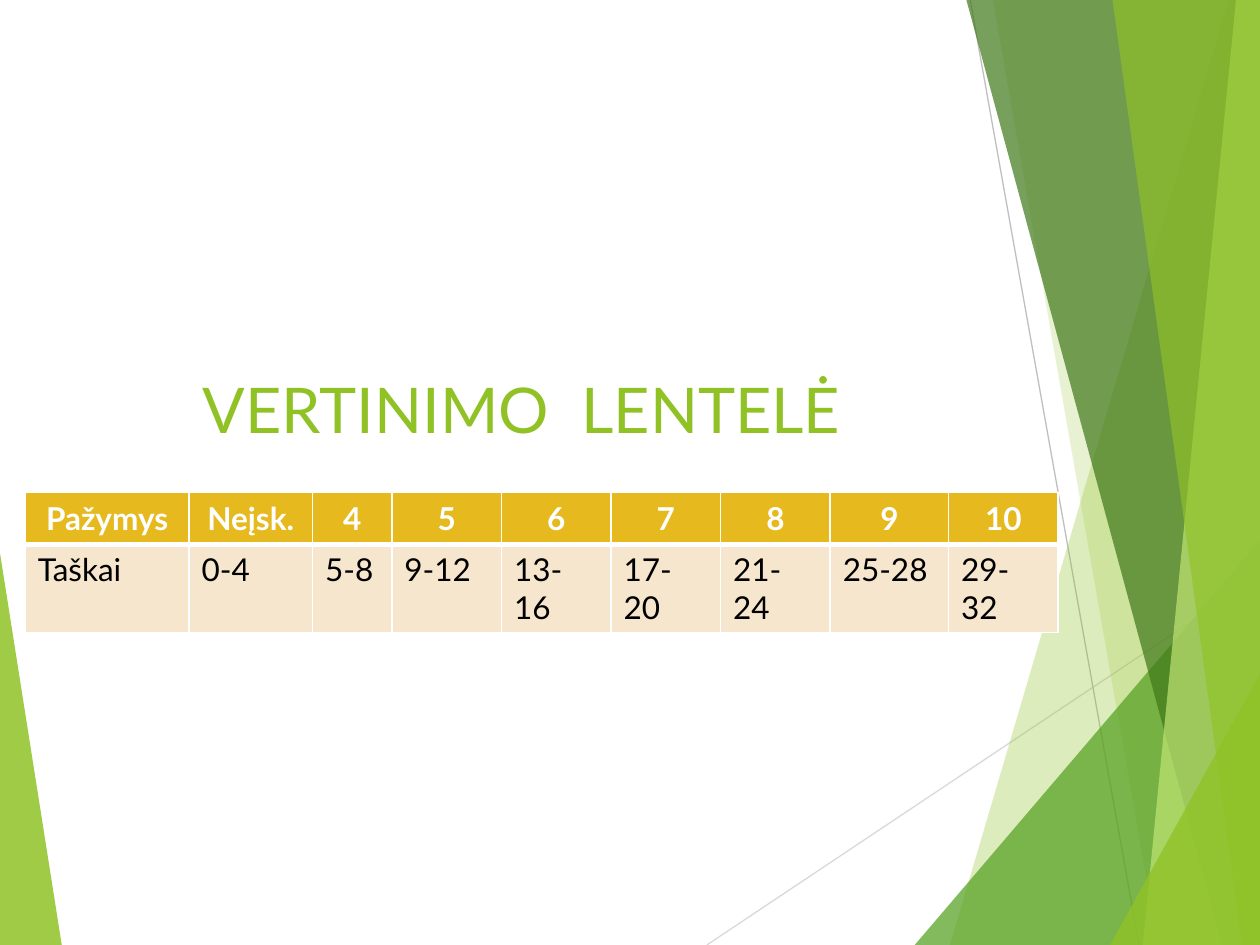
from lxml.etree import SubElement
from pptx import Presentation
from pptx.dml.color import RGBColor
from pptx.enum.shapes import MSO_CONNECTOR
from pptx.enum.text import MSO_ANCHOR, MSO_AUTO_SIZE, PP_ALIGN
from pptx.oxml.ns import qn
from pptx.util import Inches, Pt

FONT = "Lato"
COLORS = {
    "lime": "90C226", "green": "54A021", "forest": "3F7819", "pale": "C0E474",
    "light_gray": "D9D9D9", "gray": "BFBFBF", "gold": "E6B91E",
    "cream": "F5E6CD", "white": "FFFFFF", "black": "000000",
}
WIDTH, HEIGHT = 10, 7.5

TITLE = "VERTINIMO  LENTELĖ"
GRADES = [
    ("Pažymys", "Taškai", 1.3), ("Neįsk.", "0-4", 0.98), ("4", "5-8", 0.63),
    ("5", "9-12", 0.87), ("6", "13-16", 0.87), ("7", "17-20", 0.87),
    ("8", "21-24", 0.87), ("9", "25-28", 0.94), ("10", "29-32", 0.87),
]  # grade, points, column width
ROW_STYLES = [
    dict(fill="gold", text="white", bold=True, align=PP_ALIGN.CENTER, bottom=3),
    dict(fill="cream", text="black", bold=False, align=PP_ALIGN.LEFT, bottom=1),
]

RAYS = [
    ((5.61, HEIGHT), (WIDTH, 4.57), "light_gray"),
    ((7.7, 0), (9.04, HEIGHT), "gray"),
]
LEFT_SHARD = ([(0, 4.39), (0.49, HEIGHT), (0, HEIGHT)], "lime", 85)


def right_shard(top, bottom, color, opacity):
    """Band from the slide's top to its bottom, filled out to the right edge."""
    points = [(top, 0), (bottom, HEIGHT), (WIDTH, HEIGHT), (WIDTH, 0)]
    return points, color, opacity


def corner_shard(left, top, color, opacity):
    """Triangle in the lower right corner."""
    points = [(left, HEIGHT), (WIDTH, top), (WIDTH, HEIGHT)]
    return points, color, opacity


RIGHT_SHARDS = [
    right_shard(9.75, 7.54, "lime", 30),
    right_shard(7.88, 9.19, "lime", 20),
    corner_shard(7.26, 4.29, "green", 72),
    right_shard(7.67, 9.7, "forest", 70),
    right_shard(9.81, 9.07, "pale", 70),
    right_shard(8.83, 9.86, "lime", 65),
    corner_shard(8.81, 5.35, "lime", 80),
]


def rgb(color):
    return RGBColor.from_string(COLORS[color])


def draw_shard(shapes, points, color, opacity):
    corners = [(Inches(x), Inches(y)) for x, y in points]
    builder = shapes.build_freeform(*corners[0])
    builder.add_line_segments(corners[1:], close=True)
    shard = builder.convert_to_shape()
    shard.shadow.inherit = False
    shard.line.fill.background()
    shard.fill.solid()
    shard.fill.fore_color.rgb = rgb(color)
    tint = shard._element.spPr.find(".//" + qn("a:srgbClr"))
    SubElement(tint, qn("a:alpha"), val=str(opacity * 1000))


def draw_ray(shapes, start, end, color):
    ends = [Inches(length) for length in (*start, *end)]
    ray = shapes.add_connector(MSO_CONNECTOR.STRAIGHT, *ends)
    ray.line.color.rgb = rgb(color)
    ray.line.width = Pt(0.75)
    SubElement(ray._element.spPr, qn("a:effectLst"))


def write(frame, text, size, color, bold, align):
    paragraph = frame.paragraphs[0]
    paragraph.alignment = align
    run = paragraph.add_run()
    run.text = text
    for name, value in dict(name=FONT, size=Pt(size), bold=bold).items():
        setattr(run.font, name, value)
    run.font.color.rgb = rgb(color)


def style_cell(cell, text, style, top):
    write(cell.text_frame, text, 18, style["text"], style["bold"], style["align"])
    properties = cell._tc.get_or_add_tcPr()
    borders = {"lnL": 1, "lnR": 1, "lnT": top, "lnB": style["bottom"]}
    for side, points in borders.items():
        border = SubElement(properties, qn(f"a:{side}"), w=str(Pt(points)))
        fill = SubElement(border, qn("a:solidFill"))
        SubElement(fill, qn("a:srgbClr"), val=COLORS["white"])
    cell.fill.solid()
    cell.fill.fore_color.rgb = rgb(style["fill"])


def add_title(slide):
    title = slide.shapes.title
    box = dict(left=1.51, top=2.89, width=6.98, height=1.41)
    for name, length in box.items():
        setattr(title, name, Inches(length))
    frame = title.text_frame
    layout = dict(word_wrap=True, auto_size=MSO_AUTO_SIZE.NONE,
                  vertical_anchor=MSO_ANCHOR.TOP)
    for name, value in layout.items():
        setattr(frame, name, value)
    write(frame, TITLE, 36, "lime", False, PP_ALIGN.LEFT)
    slide.shapes._spTree.append(title._element)


def add_grades(shapes):
    *rows, widths = zip(*GRADES)
    row_height = 0.41
    box = [Inches(v) for v in (0.2, 3.91, sum(widths), row_height * len(rows))]
    table = shapes.add_table(len(rows), len(widths), *box).table
    for column, width in zip(table.columns, widths):
        column.width = Inches(width)
    top = 1
    for r, (texts, style) in enumerate(zip(rows, ROW_STYLES)):
        table.rows[r].height = Inches(row_height)
        for c, text in enumerate(texts):
            style_cell(table.cell(r, c), text, style, top)
        top = style["bottom"]


def main():
    deck = Presentation()
    deck.slide_width, deck.slide_height = Inches(WIDTH), Inches(HEIGHT)
    slide = deck.slides.add_slide(deck.slide_layouts[5])
    draw_shard(slide.shapes, *LEFT_SHARD)
    for ray in RAYS:
        draw_ray(slide.shapes, *ray)
    for shard in RIGHT_SHARDS:
        draw_shard(slide.shapes, *shard)
    add_title(slide)
    add_grades(slide.shapes)
    deck.save("out.pptx")


if __name__ == "__main__":
    main()
